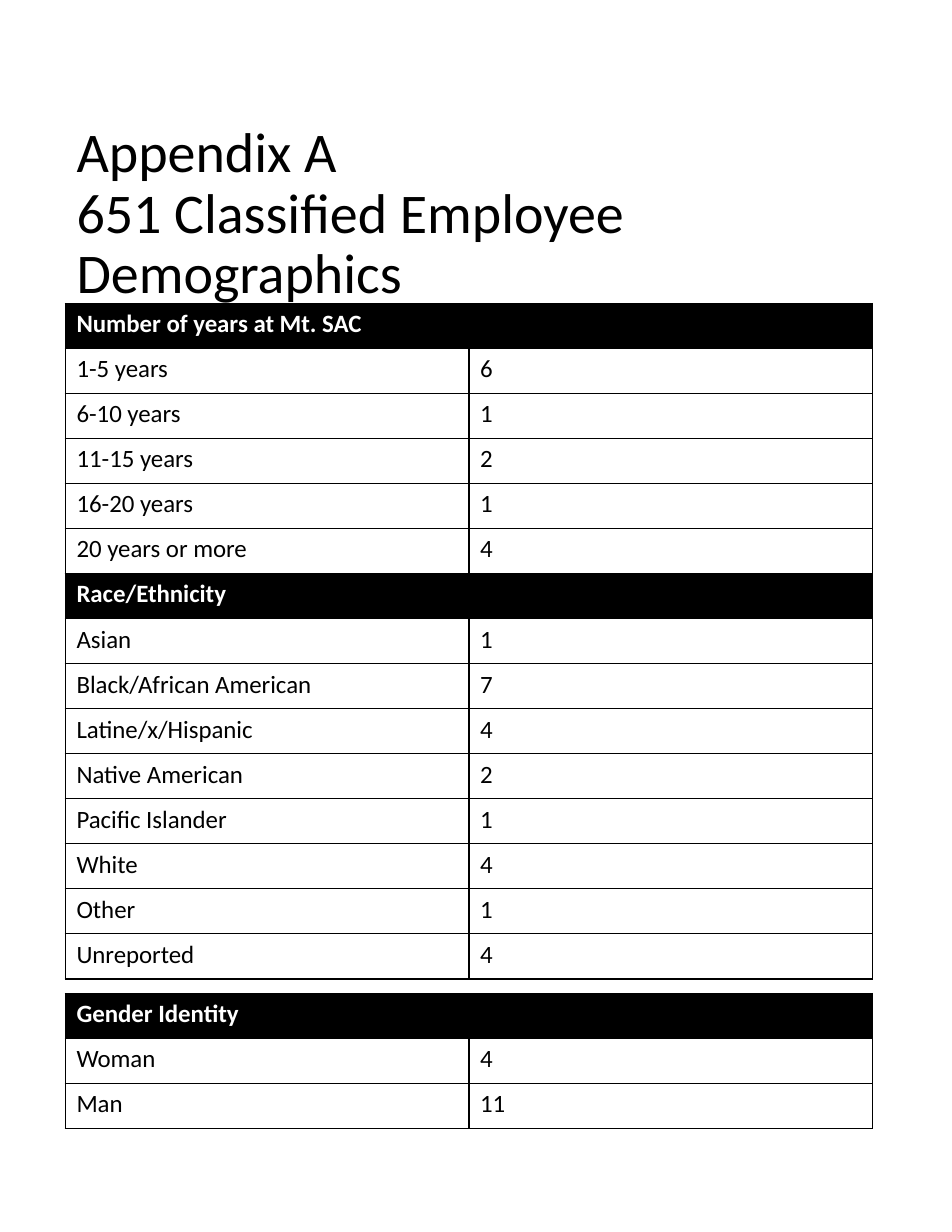
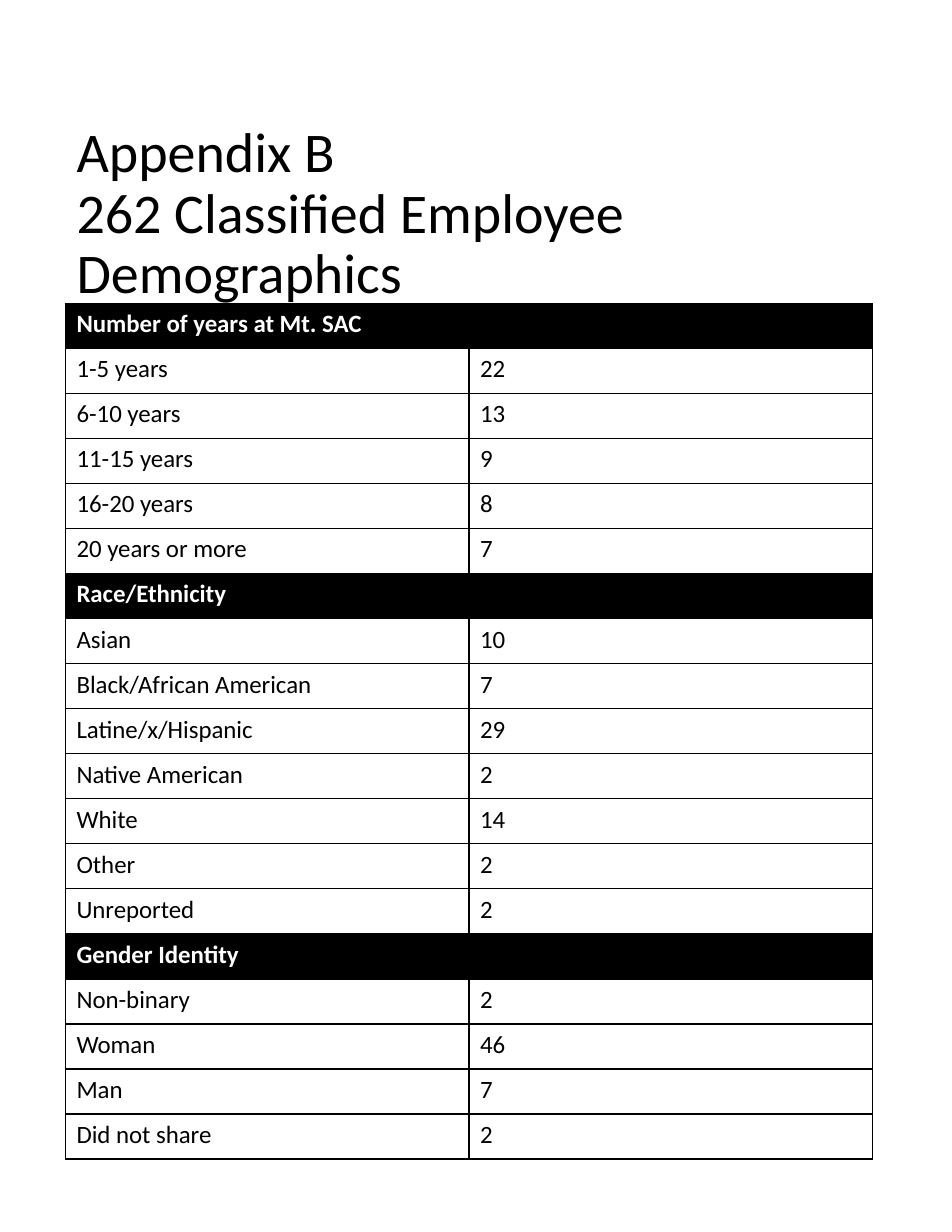
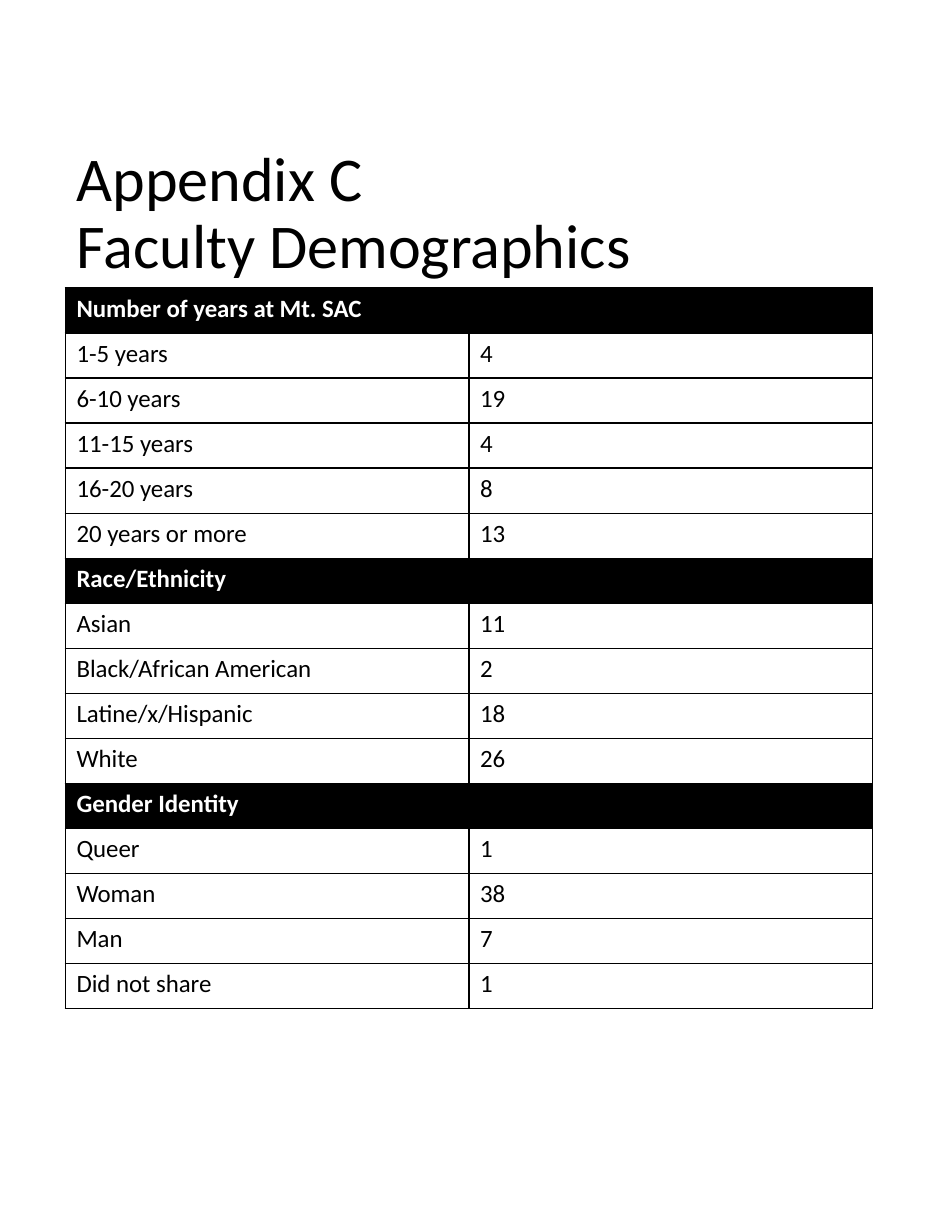
from dataclasses import dataclass

from lxml.etree import SubElement
from pptx import Presentation
from pptx.dml.color import RGBColor
from pptx.enum.text import MSO_ANCHOR, MSO_AUTO_SIZE, PP_ALIGN
from pptx.oxml.ns import qn
from pptx.util import Pt

BLACK = RGBColor(0x00, 0x00, 0x00)
WHITE = RGBColor(0xFF, 0xFF, 0xFF)
FONT = "Calibri"
LEFT = 42
TITLE_TOP, TITLE_WIDTH, TITLE_HEIGHT = 81.4, 527.8, 113.8
TABLE_WIDTH, ROW_HEIGHT = 519, 28.95
TITLE_ONLY = 5
YEARS = ("1-5 years", "6-10 years", "11-15 years", "16-20 years", "20 years or more")


@dataclass(frozen=True)
class Section:
    heading: str
    counts: dict[str, int]
    gap: float = 0

    @property
    def height(self) -> float:
        return ROW_HEIGHT * (len(self.counts) + 1)


@dataclass(frozen=True)
class Appendix:
    title: str
    title_size: float
    tables_top: float
    sections: tuple[Section, ...]


def years(*counts: int) -> Section:
    return Section("Number of years at Mt. SAC", dict(zip(YEARS, counts)))


def race(gap: float = 0, **counts: int) -> Section:
    return Section("Race/Ethnicity", counts, gap)


APPENDICES = (
    Appendix("Appendix A\v651 Classified Employee Demographics", 36, 195.1, (
        years(6, 1, 2, 1, 4),
        Section("Race/Ethnicity", {
            "Asian": 1, "Black/African American": 7, "Latine/x/Hispanic": 4,
            "Native American": 2, "Pacific Islander": 1, "White": 4,
            "Other": 1, "Unreported": 4}),
        Section("Gender Identity", {"Woman": 4, "Man": 11}, gap=9.3),
    )),
    Appendix("Appendix B\v262 Classified Employee Demographics", 36, 195.1, (
        years(22, 13, 9, 8, 7),
        Section("Race/Ethnicity", {
            "Asian": 10, "Black/African American": 7, "Latine/x/Hispanic": 29,
            "Native American": 2, "White": 14, "Other": 2, "Unreported": 2}),
        Section("Gender Identity", {
            "Non-binary": 2, "Woman": 46, "Man": 7, "Did not share": 2}),
    )),
    Appendix("Appendix C\vFaculty Demographics", 40, 185.2, (
        years(4, 19, 4, 8, 13),
        Section("Race/Ethnicity", {
            "Asian": 11, "Black/African American": 2, "Latine/x/Hispanic": 18,
            "White": 26}),
        Section("Gender Identity", {
            "Queer": 1, "Woman": 38, "Man": 7, "Did not share": 1}),
    )),
)


def write(tf, text: str, *, size: float = 16, color: RGBColor = BLACK,
          bold: bool = False, spacing: float = 1.0) -> None:
    p = tf.paragraphs[0]
    p.text = text
    p.alignment = PP_ALIGN.LEFT
    p.line_spacing = spacing
    for r in p.runs:
        r.font.name = FONT
        r.font.size = Pt(size)
        r.font.bold = bold
        r.font.color.rgb = color


def format_cell(cell, fill: RGBColor) -> None:
    tc_pr = cell._tc.get_or_add_tcPr()
    for side in ("lnL", "lnR", "lnT", "lnB"):
        ln = SubElement(tc_pr, qn(f"a:{side}"), w=str(Pt(1)))
        SubElement(SubElement(ln, qn("a:solidFill")), qn("a:srgbClr"), val=str(BLACK))
    cell.fill.solid()
    cell.fill.fore_color.rgb = fill


def add_section(s, section: Section, top: float) -> None:
    table = s.shapes.add_table(len(section.counts) + 1, 2, Pt(LEFT), Pt(top),
                               Pt(TABLE_WIDTH), Pt(section.height)).table
    for row in table.rows:
        row.height = Pt(ROW_HEIGHT)
    for i, row in enumerate(table.rows):
        for cell in row.cells:
            format_cell(cell, WHITE if i else BLACK)
    heading = table.cell(0, 0)
    heading.merge(table.cell(0, 1))
    write(heading.text_frame, section.heading, color=WHITE, bold=True)
    for i, (label, count) in enumerate(section.counts.items(), 1):
        write(table.cell(i, 0).text_frame, label)
        write(table.cell(i, 1).text_frame, str(count))


def add_title(s, text: str, size: float) -> None:
    sp = s.shapes.title
    sp.left, sp.top = Pt(LEFT), Pt(TITLE_TOP)
    sp.width, sp.height = Pt(TITLE_WIDTH), Pt(TITLE_HEIGHT)
    tf = sp.text_frame
    tf.word_wrap = True
    tf.auto_size = MSO_AUTO_SIZE.NONE
    tf.vertical_anchor = MSO_ANCHOR.MIDDLE
    write(tf, text, size=size, spacing=0.9)


def add_appendix(prs, appendix: Appendix) -> None:
    s = prs.slides.add_slide(prs.slide_layouts[TITLE_ONLY])
    add_title(s, appendix.title, appendix.title_size)
    top = appendix.tables_top
    for section in appendix.sections:
        top += section.gap
        add_section(s, section, top)
        top += section.height


def main() -> None:
    prs = Presentation()
    prs.slide_width, prs.slide_height = Pt(612), Pt(792)
    for appendix in APPENDICES:
        add_appendix(prs, appendix)
    prs.save("out.pptx")


if __name__ == "__main__":
    main()
